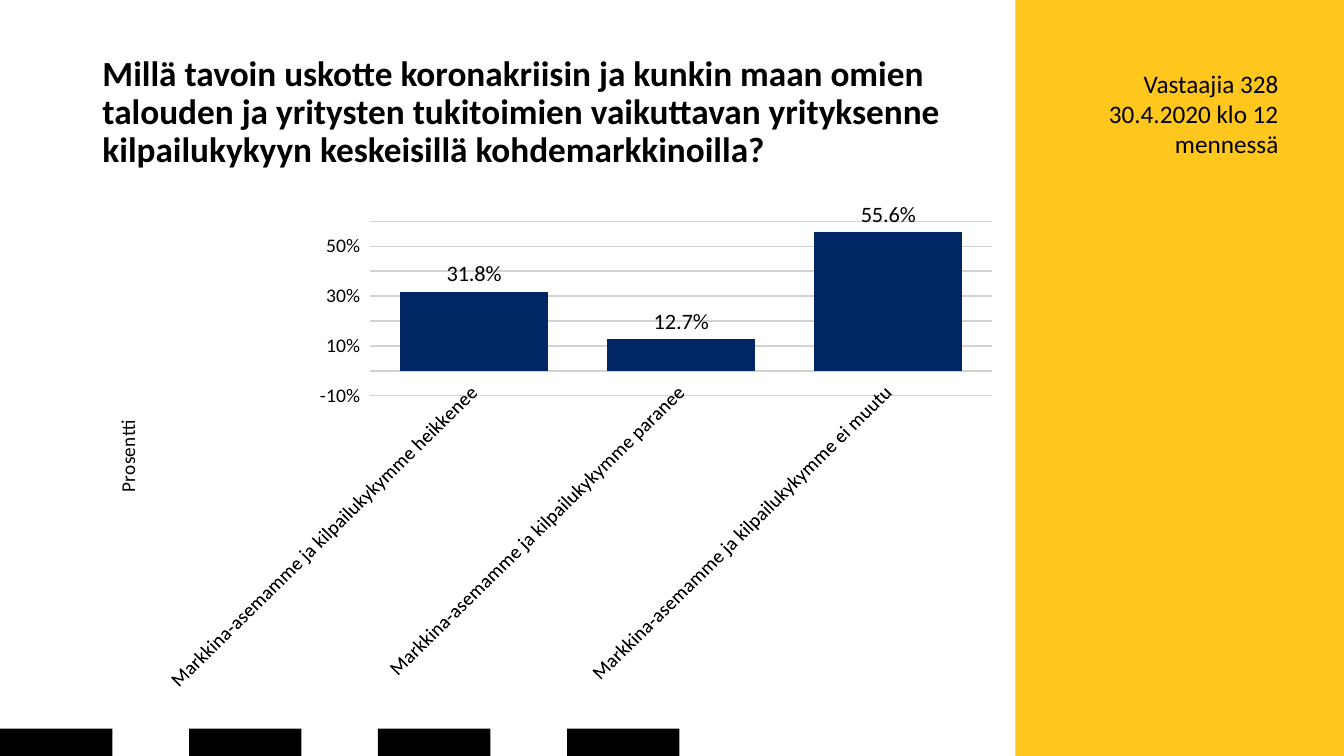
import pptx
import pptx.chart.data
import pptx.dml.color
import pptx.enum.chart
import pptx.enum.shapes
import pptx.enum.text
import pptx.util

PX = 9525  # EMU per px, 96 px to the inch
BLACK = "000000"
NAVY = "002663"


def color(value):
    return pptx.dml.color.RGBColor.from_string(value)


def style(font, size, bold=False):
    font.name = "Calibri"
    font.size = pptx.util.Pt(size)
    font.bold = bold
    font.color.rgb = color(BLACK)


deck = pptx.Presentation()
deck.slide_width, deck.slide_height = 1280 * PX, 720 * PX
page = deck.slides.add_slide(deck.slide_layouts[5])

# Yellow side panel and black footer blocks
blocks = [(967, 0, 313, 720, "FFC61E")]
blocks += [(180 * index, 694, 107, 26, BLACK) for index in range(4)]
for left, top, width, height, fill in blocks:
    block = page.shapes.add_shape(
        pptx.enum.shapes.MSO_SHAPE.RECTANGLE,
        left * PX, top * PX, width * PX, height * PX)
    block.shadow.inherit = False
    block.fill.solid()
    block.fill.fore_color.rgb = color(fill)
    block.line.fill.background()

# Question
title = page.shapes.title
title.left, title.top, title.width, title.height = 88 * PX, 38 * PX, 874 * PX, 139 * PX
frame = title.text_frame
frame.text = (
    "Millä tavoin uskotte koronakriisin ja kunkin maan omien talouden ja "
    "yritysten tukitoimien vaikuttavan yrityksenne kilpailukykyyn "
    "keskeisillä kohdemarkkinoilla?")
frame.word_wrap = True
frame.auto_size = pptx.enum.text.MSO_AUTO_SIZE.NONE
frame.vertical_anchor = pptx.enum.text.MSO_ANCHOR.MIDDLE
para = frame.paragraphs[0]
para.alignment = pptx.enum.text.PP_ALIGN.LEFT
para.line_spacing = 0.9
style(para.runs[0].font, 25.2, bold=True)

# Respondents
box = page.shapes.add_textbox(1028 * PX, 60 * PX, 199 * PX, 97 * PX)
frame = box.text_frame
frame.word_wrap = True
frame.auto_size = pptx.enum.text.MSO_AUTO_SIZE.SHAPE_TO_FIT_TEXT
frame.text = "Vastaajia 328\n30.4.2020 klo 12 mennessä"
for para in frame.paragraphs:
    para.alignment = pptx.enum.text.PP_ALIGN.RIGHT
    style(para.runs[0].font, 18)

# Column chart
data = pptx.chart.data.CategoryChartData(number_format="0.0%")
data.categories = [
    f"Markkina-asemamme ja kilpailukykymme {change}"
    for change in ("heikkenee", "paranee", "ei muutu")]
data.add_series("Series 1", (0.318, 0.127, 0.556))
chart = page.shapes.add_chart(
    pptx.enum.chart.XL_CHART_TYPE.COLUMN_CLUSTERED,
    88 * PX, 192 * PX, 874 * PX, 477 * PX, data).chart
chart.has_legend = False
chart.has_title = False
style(chart.font, 18)

plot = chart.plots[0]
plot.gap_width = 40
plot.vary_by_categories = False
series = plot.series[0]
series.format.fill.solid()
series.format.fill.fore_color.rgb = color(NAVY)
series.format.line.fill.background()
labels = series.data_labels
labels.show_value = True
labels.number_format = "0.0%"
labels.number_format_is_linked = False
labels.position = pptx.enum.chart.XL_LABEL_POSITION.OUTSIDE_END
style(labels.font, 16)

# Axes
for axis in (chart.category_axis, chart.value_axis):
    axis.major_tick_mark = pptx.enum.chart.XL_TICK_MARK.CROSS
    axis.format.line.fill.background()
    style(axis.tick_labels.font, 14)

# Slanted category labels
chart.category_axis._element.txPr.bodyPr.set("rot", "-2700000")

percent = chart.value_axis
percent.minimum_scale = -0.1
percent.maximum_scale = 0.6
percent.major_unit = 0.1
percent.tick_labels.number_format = "0%"
percent.tick_labels.number_format_is_linked = False
percent.major_gridlines.format.line.color.rgb = color("D3D3D3")
percent.major_gridlines.format.line.width = pptx.util.Pt(1)
frame = percent.axis_title.text_frame
frame.text = "Prosentti"
style(frame.paragraphs[0].runs[0].font, 14)

deck.save("out.pptx")
